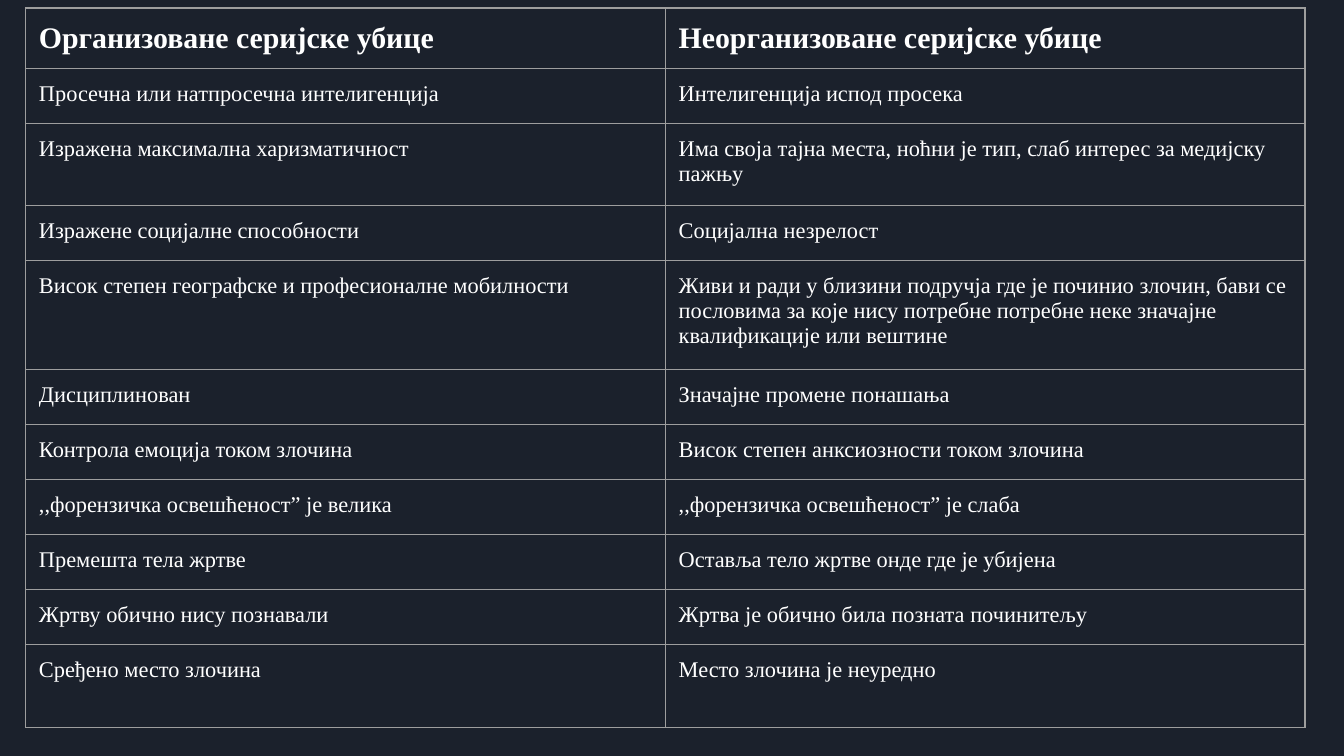
from pptx import Presentation
from pptx.dml.color import RGBColor
from pptx.oxml.ns import qn
from pptx.util import Inches, Pt
from lxml import etree

BACK, WHITE, GREY = "1B212C", "FFFFFF", "9E9E9E"
FONT = "Times New Roman"
BLANK = 6
LINE = 0.41  # height of a one-line row

# Row height, organized, disorganized
ROWS = [
    (0.43, "Организоване серијске убице", "Неорганизоване серијске убице"),
    (LINE, "Просечна или натпросечна интелигенција", "Интелигенција испод просека"),
    (0.61, "Изражена максимална харизматичност",
     "Има своја тајна места, ноћни је тип, слаб интерес за медијску пажњу"),
    (LINE, "Изражене социјалне способности", "Социјална незрелост"),
    (0.81, "Висок степен географске и професионалне мобилности",
     "Живи и ради у близини подручја где је починио злочин, бави се пословима "
     "за које нису потребне потребне неке значајне квалификације или вештине"),
    (LINE, "Дисциплинован", "Значајне промене понашања"),
    (LINE, "Контрола емоција током злочина", "Висок степен анксиозности током злочина"),
    (LINE, ",,форензичка освешћеност” је велика", ",,форензичка освешћеност” је слаба"),
    (LINE, "Премешта тела жртве", "Оставља тело жртве онде где је убијена"),
    (LINE, "Жртву обично нису познавали", "Жртва је обично била позната починитељу"),
    (0.62, "Сређено место злочина", "Место злочина је неуредно"),
]


def color(code):
    return RGBColor.from_string(code)


def write(frame, text, size=12, bold=False, fill=WHITE):
    run = frame.paragraphs[0].add_run()
    run.text = text
    run.font.name = FONT
    run.font.size = Pt(size)
    run.font.bold = bold
    run.font.color.rgb = color(fill)


def border(cell, code=GREY, width=0.75):
    props = cell._tc.get_or_add_tcPr()
    for side in ("lnL", "lnR", "lnT", "lnB"):
        line = etree.SubElement(props, qn(f"a:{side}"), w=str(Pt(width)))
        solid = etree.SubElement(line, qn("a:solidFill"))
        etree.SubElement(solid, qn("a:srgbClr"), val=code)


def style(cell):
    cell.margin_left = cell.margin_right = Inches(0.1)
    cell.margin_top = cell.margin_bottom = Inches(0.1)
    border(cell)
    cell.fill.background()


def add_grid(slide, rows):
    high = sum(row[0] for row in rows)
    table = slide.shapes.add_table(
        len(rows), 2, Inches(0.19), Inches(0.06), Inches(9.52), Inches(high)).table
    table.first_row = table.horz_banding = False
    for i, (height, *texts) in enumerate(rows):
        table.rows[i].height = Inches(height)
        head = i == 0
        for j, text in enumerate(texts):
            cell = table.cell(i, j)
            style(cell)
            write(cell.text_frame, text, size=16 if head else 12, bold=head)


def main():
    # Widescreen page, 16:9
    deck = Presentation()
    deck.slide_width = Inches(10)
    deck.slide_height = deck.slide_width * 9 // 16
    slide = deck.slides.add_slide(deck.slide_layouts[BLANK])

    # Dark background
    fill = slide.background.fill
    fill.solid()
    fill.fore_color.rgb = color(BACK)

    # Comparison table
    add_grid(slide, ROWS)
    deck.save("out.pptx")


if __name__ == "__main__":
    main()
